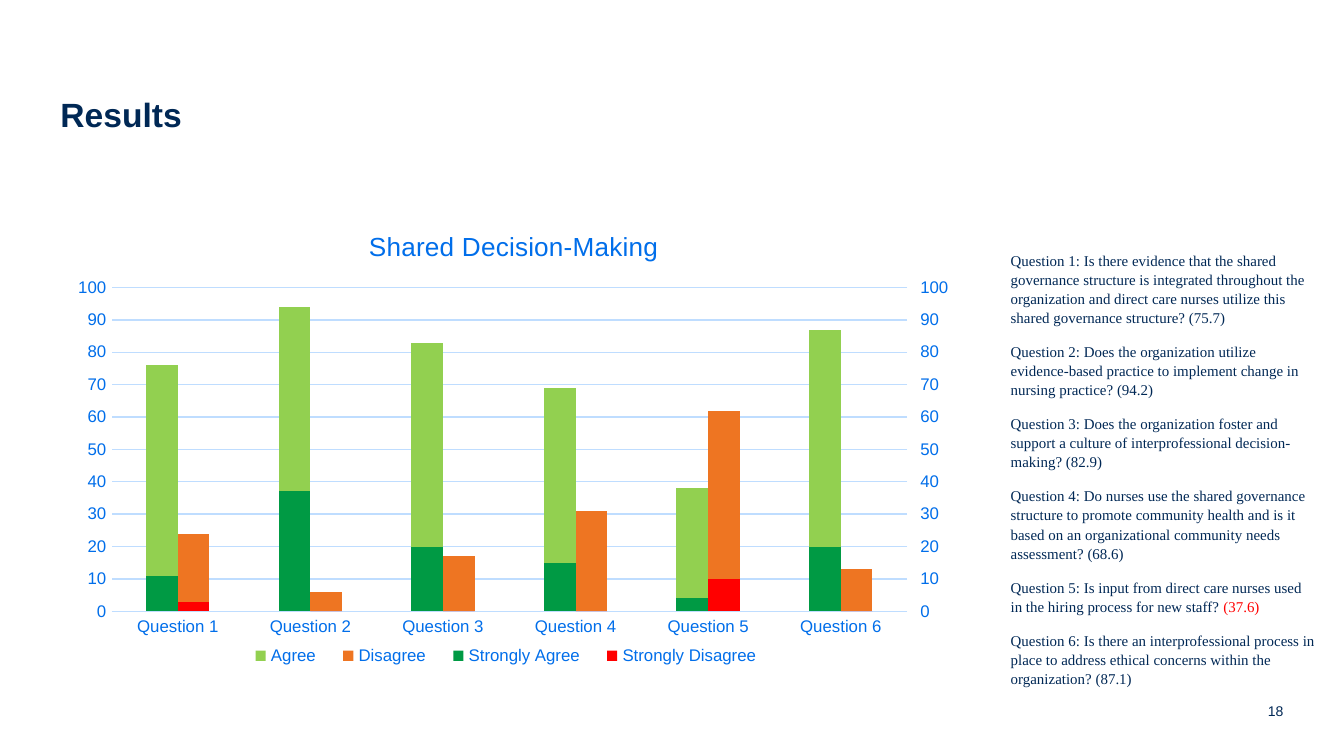
import copy

import lxml.etree
import pptx
import pptx.chart.axis
import pptx.chart.data
import pptx.dml.color
import pptx.enum.chart
import pptx.enum.text
import pptx.oxml.ns
import pptx.util

Inches = pptx.util.Inches
Pt = pptx.util.Pt
RGBColor = pptx.dml.color.RGBColor
qn = pptx.oxml.ns.qn

NAVY = RGBColor(0x00, 0x28, 0x55)
BLUE = RGBColor(0x00, 0x6E, 0xEA)
PALE_BLUE = RGBColor(0xBF, 0xDD, 0xFF)
LIME = RGBColor(0x92, 0xD0, 0x50)
ORANGE = RGBColor(0xEE, 0x75, 0x22)
GREEN = RGBColor(0x00, 0x9A, 0x44)
RED = RGBColor(0xFF, 0x00, 0x00)

CHART_WIDTH, CHART_HEIGHT = 6.75, 3.55
SERIES = [
    ("Agree", (76, 94, 83, 69, 38, 87), LIME),
    ("Disagree", (24, 6, 17, 31, 62, 13), ORANGE),
    ("Strongly Agree", (11, 37, 20, 15, 4, 20), GREEN),
    ("Strongly Disagree", (3, 0, 0, 0, 10, 0), RED),
]
PRIMARY_COUNT = 2

QUESTIONS = [
    ("Is there evidence that the shared governance structure is integrated throughout the "
     "organization and direct care nurses utilize this shared governance structure?", "(75.7)", NAVY),
    ("Does the organization utilize evidence-based practice to implement change in "
     "nursing practice?", "(94.2)", NAVY),
    ("Does the organization foster and support a culture of interprofessional "
     "decision-making?", "(82.9)", NAVY),
    ("Do nurses use the shared governance structure to promote community health and is it "
     "based on an organizational community needs assessment?", "(68.6)", NAVY),
    ("Is input from direct care nurses used in the hiring process for new staff?", "(37.6)", RED),
    ("Is there an interprofessional process in place to address ethical concerns within "
     "the organization?", "(87.1)", NAVY),
]


class ResultsSlide:
    heading_font = "Arial"
    body_font = "Times New Roman"

    def __init__(self, deck):
        self.page = deck.slides.add_slide(deck.slide_layouts[6])

    def style(self, font, size, color, name=heading_font, bold=False):
        font.name = name
        font.size = Pt(size)
        font.color.rgb = color
        font.bold = bold

    def frame(self, left, top, width, height):
        box = self.page.shapes.add_textbox(Inches(left), Inches(top), Inches(width), Inches(height))
        frame = box.text_frame
        frame.word_wrap = True
        frame.margin_left = frame.margin_right = frame.margin_top = frame.margin_bottom = 0
        return frame

    def title(self, text):
        frame = self.frame(0.45, 0.7, 9.1, 0.7)
        frame.text = text
        self.style(frame.paragraphs[0].runs[0].font, 18, NAVY, bold=True)

    def page_number(self, text):
        frame = self.frame(9.25, 5.2, 0.3, 0.15)
        frame.vertical_anchor = pptx.enum.text.MSO_ANCHOR.BOTTOM
        frame.text = text
        para = frame.paragraphs[0]
        para.alignment = pptx.enum.text.PP_ALIGN.RIGHT
        self.style(para.runs[0].font, 7.5, NAVY)

    def questions(self, questions):
        frame = self.frame(7.52, 1.86, 2.27, 3.24)
        for number, (question, score, color) in enumerate(questions, 1):
            para = frame.paragraphs[0] if number == 1 else frame.add_paragraph()
            para.line_spacing = 1.07
            para.space_after = Pt(8)
            for text, shade in ((f"Question {number}: {question} ", NAVY), (score, color)):
                span = para.add_run()
                span.text = text
                self.style(span.font, 8, shade, self.body_font)

    def place(self, holder, index, inner=False, **lengths):
        for old in holder.xpath("c:layout"):
            holder.remove(old)
        layout = holder.makeelement(qn("c:layout"))
        holder.insert(index, layout)
        manual = lxml.etree.SubElement(layout, qn("c:manualLayout"))
        if inner:
            lxml.etree.SubElement(manual, qn("c:layoutTarget"), val="inner")
        for mode in ("xMode", "yMode"):
            lxml.etree.SubElement(manual, qn(f"c:{mode}"), val="edge")
        for name, length in lengths.items():
            whole = CHART_WIDTH if name in "xw" else CHART_HEIGHT
            lxml.etree.SubElement(manual, qn(f"c:{name}"), val=str(length / whole))

    def axes(self, chart):
        category, value = chart.category_axis, chart.value_axis
        for axis in (category, value):
            axis.major_tick_mark = axis.minor_tick_mark = pptx.enum.chart.XL_TICK_MARK.NONE
            self.style(axis.tick_labels.font, 9, BLUE)
        value.minimum_scale, value.maximum_scale, value.major_unit = 0, 100, 10
        value.has_major_gridlines = True
        value.format.line.fill.background()
        for line in (category.format.line, value.major_gridlines.format.line):
            line.color.rgb = PALE_BLUE
            line.width = Pt(0.75)

    def second_axis(self, chart):
        area = chart.element.xpath("c:chart/c:plotArea")[0]
        bars = area.xpath("c:barChart")[0]
        category, value = area.xpath("c:catAx | c:valAx")
        right_bars, right_category, right_value = map(copy.deepcopy, (bars, category, value))
        for series in bars.xpath("c:ser")[PRIMARY_COUNT:]:
            bars.remove(series)
        for series in right_bars.xpath("c:ser")[:PRIMARY_COUNT]:
            right_bars.remove(series)
        bars.addnext(right_bars)
        value.addnext(right_value)
        right_value.addnext(right_category)
        ids = dict(zip([node.get("val") for node in bars.xpath("c:axId")], ("5001", "5002")))
        for part in (right_bars, right_category, right_value):
            for node in part.xpath("c:axId | c:crossAx"):
                node.set("val", ids[node.get("val")])
        right_value.xpath("c:axPos")[0].set("val", "r")
        right_value.xpath("c:crosses")[0].set("val", "max")
        axis = pptx.chart.axis.ValueAxis(right_value)
        axis.has_major_gridlines = False
        axis.major_tick_mark = pptx.enum.chart.XL_TICK_MARK.OUTSIDE
        pptx.chart.axis.CategoryAxis(right_category).visible = False
        self.place(area, 0, inner=True, x=0.38, y=0.59, w=5.92, h=2.41)

    def chart(self, title, series):
        data = pptx.chart.data.CategoryChartData()
        data.categories = [f"Question {number}" for number in range(1, 7)]
        for name, values, _ in series:
            data.add_series(name, values)
        chart = self.page.shapes.add_chart(
            pptx.enum.chart.XL_CHART_TYPE.COLUMN_CLUSTERED,
            Inches(0.45), Inches(1.55), Inches(CHART_WIDTH), Inches(CHART_HEIGHT), data).chart
        self.style(chart.font, 10, NAVY)
        plot = chart.plots[0]
        plot.gap_width = 219
        plot.vary_by_categories = False
        for bars, (_, _, color) in zip(plot.series, series):
            bars.format.fill.solid()
            bars.format.fill.fore_color.rgb = color
        heading = chart.chart_title
        heading.text_frame.text = title
        self.style(heading.text_frame.paragraphs[0].runs[0].font, 14, BLUE)
        self.place(chart.element.xpath("c:chart/c:title")[0], 1, x=2.26, y=0.12)
        chart.has_legend = True
        chart.legend.position = pptx.enum.chart.XL_LEGEND_POSITION.BOTTOM
        chart.legend.include_in_layout = False
        self.style(chart.legend.font, 9, BLUE)
        self.place(chart.element.xpath("c:chart/c:legend")[0], 1, x=1.29, y=3.18, w=4.05, h=0.3)
        self.axes(chart)
        self.second_axis(chart)


def main():
    deck = pptx.Presentation()
    deck.slide_width = Inches(10)
    deck.slide_height = deck.slide_width * 9 // 16
    slide = ResultsSlide(deck)
    slide.title("Results")
    slide.page_number("18")
    slide.chart("Shared Decision-Making", SERIES)
    slide.questions(QUESTIONS)
    deck.save("out.pptx")


if __name__ == "__main__":
    main()
